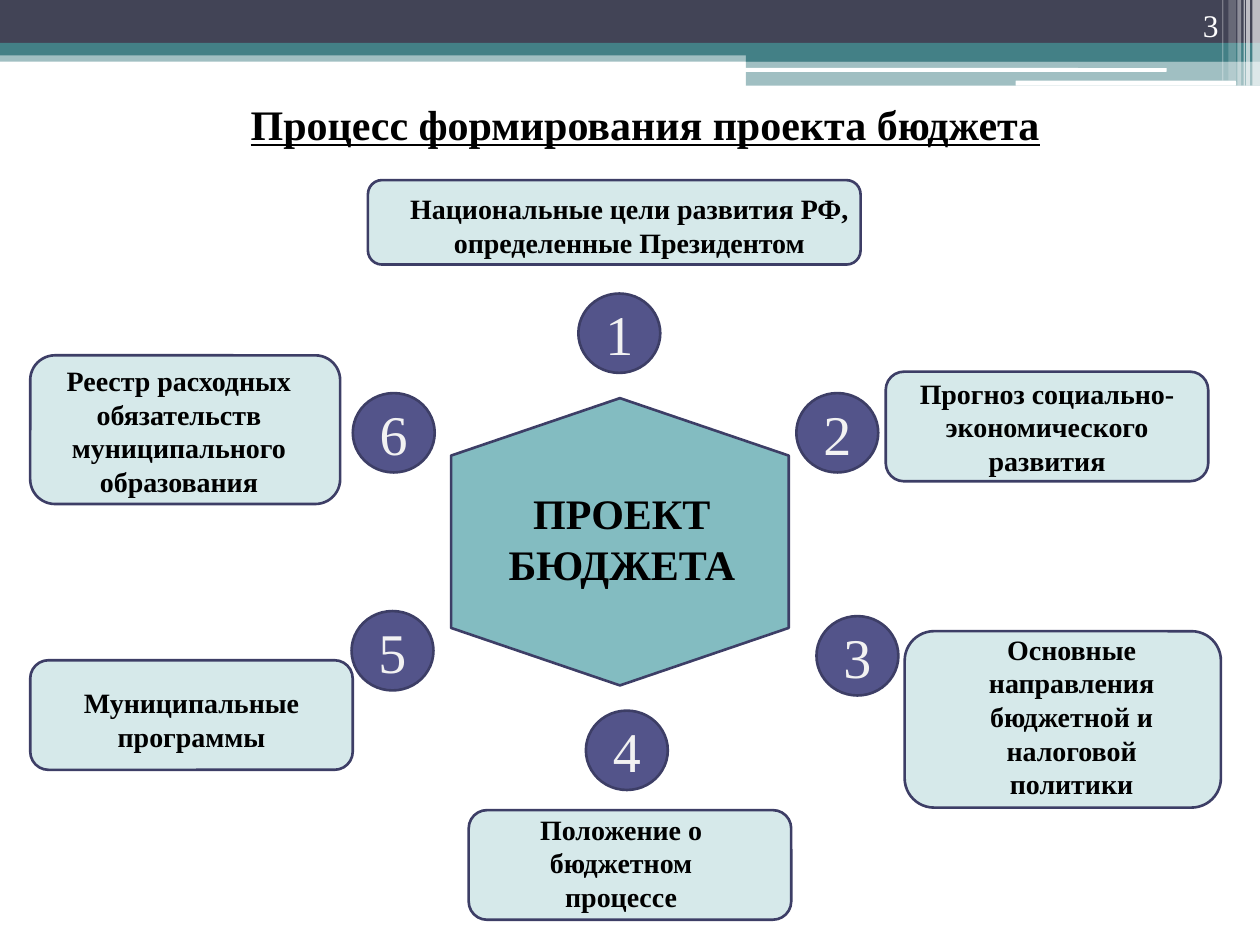
from lxml.etree import SubElement
from pptx import Presentation
from pptx.dml.color import RGBColor
from pptx.enum.shapes import MSO_SHAPE
from pptx.enum.text import MSO_ANCHOR, PP_ALIGN
from pptx.oxml.ns import qn
from pptx.util import Inches, Pt

COLORS = {
    "navy": "424456", "teal": "438086", "white": "FFFFFF", "black": "000000",
    "hexagon": "83BCC1", "badge": "53548A", "card": "D6E9EA",
    "outline": "3D3E66", "digit": "F2F2F2",
}
FONT = "Times New Roman"

prs = Presentation()
prs.slide_width, prs.slide_height = Inches(10), Inches(7.5)
# Grid of 100 columns by 75 rows; every box is (left, top, width, height) in cells
COL, ROW = prs.slide_width / 100, prs.slide_height / 75


def place(box):
    x, y, w, h = box
    return int(x * COL), int(y * ROW), int(w * COL), int(h * ROW)


def rgb(name):
    return RGBColor.from_string(COLORS[name])


def add_shape(slide, kind, box, fill, outline=None, opacity=100):
    sp = slide.shapes.add_shape(kind, *place(box))
    sp.shadow.inherit = False
    sp.fill.solid()
    sp.fill.fore_color.rgb = rgb(fill)
    if opacity < 100:
        color = sp.fill._xPr.find(qn("a:solidFill"))[0]
        SubElement(color, qn("a:alpha")).set("val", str(opacity * 1000))
    if outline:
        sp.line.color.rgb = rgb(outline)
        sp.line.width = Pt(1.5)
    else:
        sp.line.fill.background()
    return sp


def write(sp, text, size, color="black", bold=False, align=PP_ALIGN.CENTER,
          anchor=MSO_ANCHOR.MIDDLE):
    tf = sp.text_frame
    tf.word_wrap = True
    tf.vertical_anchor = anchor
    tf.text = text
    p = tf.paragraphs[0]
    p.alignment = align
    font = p.runs[0].font
    font.name, font.size, font.bold = FONT, Pt(size), bold
    font.color.rgb = rgb(color)
    return font


def add_label(slide, box, text, size, **style):
    return write(slide.shapes.add_textbox(*place(box)), text, size, **style)


def add_header(slide, box, number):
    x, y, w, h = box
    # Full-width bands, then the stepped bands on the right
    for left, top, height, fill, opacity in (
        (0, 4, 0.9, "teal", 50), (0, 0, 3.4, "navy", 100),
        (0, 3.4, 1, "teal", 100), (59.2, 3.9, 1, "teal", 100),
        (59.2, 4.8, 2, "teal", 50),
    ):
        add_shape(slide, MSO_SHAPE.RECTANGLE,
                  (x + left, y + top, w - left, height), fill, opacity=opacity)
    # White rules
    for left, top, width, height in ((59.1, 5.4, 33.5, 0.3),
                                     (80.6, 6.4, 17.5, 0.4)):
        add_shape(slide, MSO_SHAPE.ROUNDED_RECTANGLE,
                  (x + left, y + top, width, height), "white")
    # Translucent stripes at the right edge
    for left, width, height, opacity in (
        (99.4, 0.6, h, 65), (98.9, 0.3, h, 65), (98.7, 0.1, h, 60),
        (98.2, 0.3, h, 40), (97.5, 0.6, 6.4, 20), (97, 0.1, 6.4, 30),
    ):
        add_shape(slide, MSO_SHAPE.RECTANGLE, (x + left, y, width, height),
                  "white", opacity=opacity)
    # Slide number
    add_label(slide, (x + 89.4, y, 8.3, 4), number, 18, color="white",
              align=PP_ALIGN.RIGHT, anchor=MSO_ANCHOR.BOTTOM)


def add_title(slide, box, text):
    title = slide.shapes.title
    title.left, title.top, title.width, title.height = place(box)
    write(title, text, 24, bold=True).underline = True


def add_core(slide, box, text):
    x, y, w, h = box
    # The preset lies on its side, so its frame is the box turned by 90 degrees
    frame = (x + (w - h) / 2, y + (h - w) / 2, h, w)
    sp = add_shape(slide, MSO_SHAPE.FLOWCHART_PREPARATION, frame,
                   "hexagon", "outline")
    sp.rotation = 90
    add_label(slide, (x + 3.5, y, w - 6.7, h - 0.6), text, 24, bold=True)


def add_badge(slide, x, y, digit):
    sp = add_shape(slide, MSO_SHAPE.OVAL, (x, y, 6.5, 6.3), "badge", "outline")
    tf = sp.text_frame
    tf.margin_left = tf.margin_right = tf.margin_top = tf.margin_bottom = 0
    write(sp, digit, 32, color="digit")


def add_card(slide, box, label, text):
    x, y, w, h = box
    dx, dy, label_width = label
    add_shape(slide, MSO_SHAPE.ROUNDED_RECTANGLE, box, "card", "outline")
    add_label(slide, (x + dx, y + dy, label_width, h), text, 16, bold=True)


# Badge corner, card box, label offset and width, text; in step order
STEPS = (
    ((45.9, 23.3), (29.2, 14.3, 39.1, 6.7), (-1.2, 0.25, 43.9),
     "Национальные цели развития РФ, определенные Президентом"),
    ((63.2, 31.2), (70.3, 29.5, 25.6, 8.7), (1.4, 0, 22.8),
     "Прогноз социально-экономического развития"),
    ((64.8, 48.9), (71.8, 50.1, 25.1, 14), (2.5, -0.25, 21.5),
     "Основные направления бюджетной и налоговой политики"),
    ((46.5, 56.4), (37.2, 64.3, 25.6, 8.7), (1.1, -0.2, 22),
     "Положение о бюджетном процессе"),
    ((27.9, 48.5), (2.4, 52.4, 25.6, 8.7), (1.6, 0.35, 22.4),
     "Муниципальные программы"),
    ((28, 31.2), (2.4, 28.2, 24.6, 11.8), (0, 0.1, 23.6),
     "Реестр расходных обязательств муниципального образования"),
)

slide = prs.slides.add_slide(prs.slide_layouts[5])
add_header(slide, (0, 0, 100, 6.8), "3")
add_title(slide, (12, 3.6, 78.4, 12.4), "Процесс формирования проекта бюджета")
add_core(slide, (35.8, 31.6, 26.8, 22.8), "ПРОЕКТ БЮДЖЕТА")
for number, (corner, card, label, text) in enumerate(STEPS, 1):
    add_badge(slide, *corner, str(number))
    add_card(slide, card, label, text)

prs.save("out.pptx")
